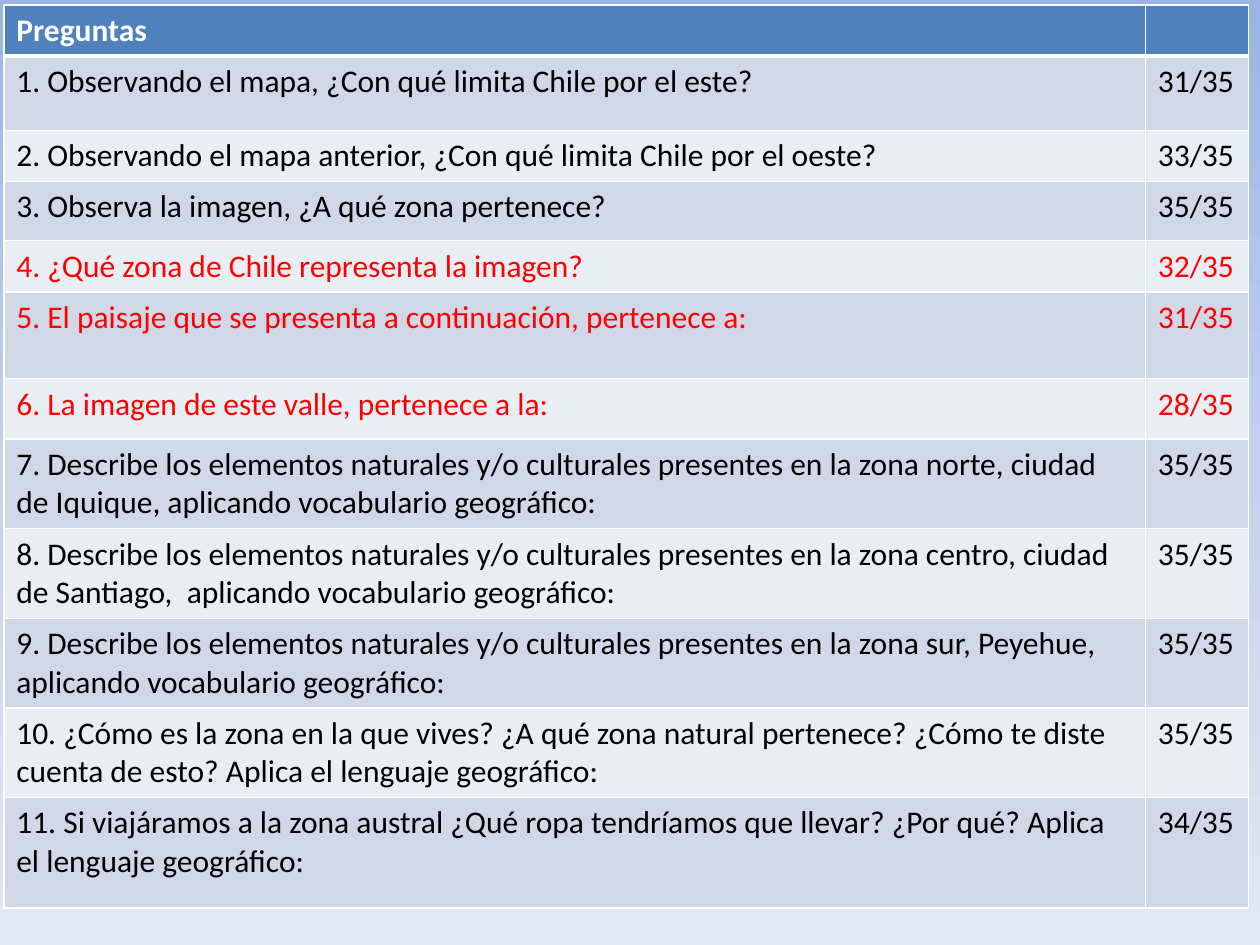
from copy import deepcopy

from lxml import etree
from pptx import Presentation, util as u
from pptx.dml.color import RGBColor
from pptx.oxml.ns import qn

WIDTH, HEIGHT = 10, 7.5
BLACK, RED, WHITE = "000000", "FF0000", "FFFFFF"
HEADER_FILL, BAND_FILLS = "4F81BD", ("D0D8E8", "E9EDF4")

QUESTIONS = [
    ("1. Observando el mapa, ¿Con qué limita Chile por el este?", "31/35", 0.59, BLACK),
    ("2. Observando el mapa anterior, ¿Con qué limita Chile por el oeste?", "33/35", 0.4, BLACK),
    ("3. Observa la imagen, ¿A qué zona pertenece?", "35/35", 0.47, BLACK),
    ("4. ¿Qué zona de Chile representa la imagen?", "32/35", 0.4, RED),
    ("5. El paisaje que se presenta a continuación, pertenece a:", "31/35", 0.69, RED),
    ("6. La imagen de este valle, pertenece a la:", "28/35", 0.48, RED),
    ("7. Describe los elementos naturales y/o culturales presentes en la zona norte, "
     "ciudad de Iquique, aplicando vocabulario geográfico:", "35/35", 0.7, BLACK),
    ("8. Describe los elementos naturales y/o culturales presentes en la zona centro, "
     "ciudad de Santiago,  aplicando vocabulario geográfico:", "35/35", 0.7, BLACK),
    ("9. Describe los elementos naturales y/o culturales presentes en la zona sur, "
     "Peyehue,  aplicando vocabulario geográfico:", "35/35", 0.7, BLACK),
    ("10. ¿Cómo es la zona en la que vives? ¿A qué zona natural pertenece? "
     "¿Cómo te diste cuenta de esto? Aplica el lenguaje geográfico:", "35/35", 0.7, BLACK),
    ("11. Si viajáramos a la zona austral ¿Qué ropa tendríamos que llevar? "
     "¿Por qué? Aplica el lenguaje geográfico:", "34/35", 0.88, BLACK),
]


def color(value):
    return RGBColor.from_string(value)


class SlideBuilder:
    font = "Calibri"
    size = 18

    def __init__(self, presentation):
        self.presentation = presentation
        self.slide = presentation.slides.add_slide(presentation.slide_layouts[6])

    def across(self, share):
        return int(self.presentation.slide_width * share)

    def down(self, share):
        return int(self.presentation.slide_height * share)

    def background(self, colors):
        fill = self.slide.background.fill
        fill.gradient()
        fill.gradient_angle = 270
        stop_list = next(self.slide.element.iter(qn("a:gsLst")))
        while len(stop_list) < len(colors):
            stop_list.append(deepcopy(stop_list[0]))
        for index, (stop, value) in enumerate(zip(fill.gradient_stops, colors)):
            stop.position = index / (len(colors) - 1)
            stop.color.rgb = color(value)

    def borders(self, cell, widths):
        properties = cell._tc.get_or_add_tcPr()
        for side, width in zip("LRTB", widths):
            line = etree.SubElement(properties, qn(f"a:ln{side}"), w=str(u.Pt(width)))
            fill = etree.SubElement(line, qn("a:solidFill"))
            etree.SubElement(fill, qn("a:srgbClr"), val=WHITE)

    def cell(self, cell, content, fill, ink, bold=False, widths=(1, 1, 1, 1)):
        self.borders(cell, widths)
        cell.fill.solid()
        cell.fill.fore_color.rgb = color(fill)
        cell.text = content
        paragraph = cell.text_frame.paragraphs[0]
        for item in (paragraph, *paragraph.runs):
            item.font.name = self.font
            item.font.size = u.Pt(self.size)
            item.font.bold = bold
            item.font.color.rgb = color(ink)

    def table(self, left, top, columns, rows):
        frame = self.slide.shapes.add_table(
            len(rows), len(columns), self.across(left), self.down(top),
            self.across(sum(columns)), self.down(sum(rows)))
        for column, share in zip(frame.table.columns, columns):
            column.width = self.across(share)
        for row, share in zip(frame.table.rows, rows):
            row.height = self.down(share)
        return frame.table


def main():
    presentation = Presentation()
    presentation.slide_width = u.Inches(WIDTH)
    presentation.slide_height = u.Inches(HEIGHT)
    builder = SlideBuilder(presentation)
    builder.background(("9AB5E4", "C2D1ED", "E1E8F5"))

    heights = [0.4] + [height for _, _, height, _ in QUESTIONS]
    table = builder.table(0.03 / WIDTH, 0.04 / HEIGHT,
                          [9.06 / WIDTH, 0.82 / WIDTH],
                          [height / HEIGHT for height in heights])
    for column, heading in enumerate(("Preguntas", "")):
        builder.cell(table.cell(0, column), heading, HEADER_FILL, WHITE,
                     bold=True, widths=(1, 1, 1, 3))
    for row, (question, score, _, ink) in enumerate(QUESTIONS, start=1):
        widths = (1, 1, 3 if row == 1 else 1, 1)
        for column, content in enumerate((question, score)):
            builder.cell(table.cell(row, column), content,
                         BAND_FILLS[(row - 1) % 2], ink, widths=widths)

    presentation.save("out.pptx")


if __name__ == "__main__":
    main()
